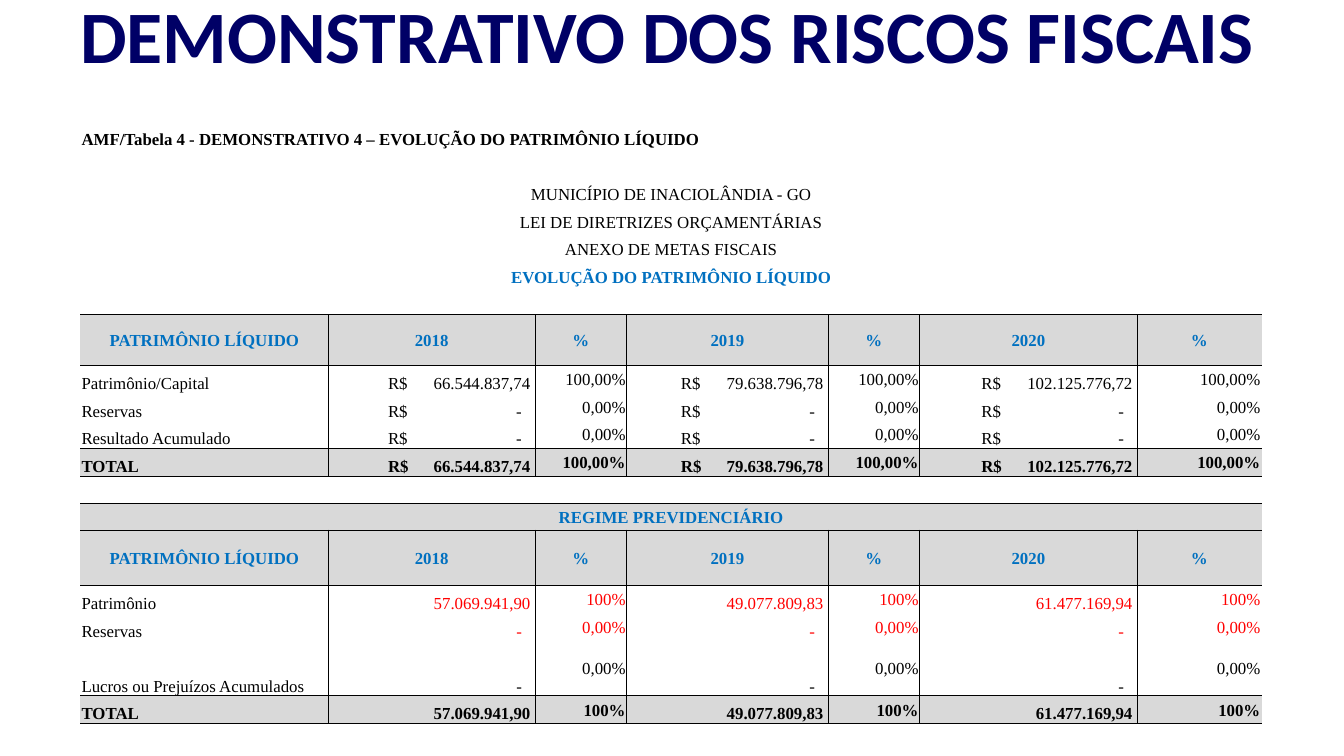
import lxml.etree
import pptx
import pptx.dml.color
import pptx.enum.shapes
import pptx.enum.text
import pptx.oxml.ns
import pptx.util

Pt = pptx.util.Pt
ALIGN = pptx.enum.text.PP_ALIGN
ANCHOR = pptx.enum.text.MSO_ANCHOR
BLACK, WHITE, NAVY, BLUE, RED, GREY = "000000", "FFFFFF", "000066", "0070C0", "FF0000", "D9D9D9"

COLUMN_WIDTHS = [132.9, 110.7, 49.2, 107.8, 49.2, 116.4, 66.7]
ROW_HEIGHT = 14.8
SPECIAL_HEIGHTS = {7: 27.3, 13: 14.2, 14: 29.8, 17: 29.5}
RULED_EDGES = {7, 8, 11, 12, 13, 14, 15, 18, 19}
GRID_ROWS = {*range(7, 12), *range(14, 19)}
CURRENCY_OFFSETS = {1: 32, 3: 29, 5: 33}
INSET = 0.7

HEADINGS = [
    ("MUNICÍPIO DE INACIOLÂNDIA - GO", BLACK, False),
    ("LEI DE DIRETRIZES ORÇAMENTÁRIAS", BLACK, False),
    ("ANEXO DE METAS FISCAIS", BLACK, False),
    ("EVOLUÇÃO DO PATRIMÔNIO LÍQUIDO", BLUE, True),
]
HEADER = ["PATRIMÔNIO LÍQUIDO", "2018", "%", "2019", "%", "2020", "%"]
NET_WORTH = ["66.544.837,74", "79.638.796,78", "102.125.776,72"]
PENSION = ["57.069.941,90", "49.077.809,83", "61.477.169,94"]
DASHES = ["-"] * 3


def color(value):
    """Turn a hex string into a colour."""
    return pptx.dml.color.RGBColor.from_string(value)


def write(para, text, *, size=9, font="Times New Roman", tint=BLACK, bold=False, align=ALIGN.LEFT):
    """Write formatted text into a paragraph."""
    para.alignment = align
    span = para.add_run()
    span.text = text
    span.font.size = Pt(size)
    span.font.name = font
    span.font.bold = bold
    span.font.color.rgb = color(tint)


def add_border(cell, side, visible):
    """Add one edge to a cell, either black or empty."""
    tag = pptx.oxml.ns.qn
    edge = lxml.etree.SubElement(cell._tc.get_or_add_tcPr(), tag(f"a:ln{side}"), w=str(Pt(0.5)))
    if visible:
        fill = lxml.etree.SubElement(edge, tag("a:solidFill"))
        lxml.etree.SubElement(fill, tag("a:srgbClr"), val=BLACK)
    else:
        lxml.etree.SubElement(edge, tag("a:noFill"))


def add_right_tab(para, position):
    """Give a paragraph one right-aligned tab stop."""
    tag = pptx.oxml.ns.qn
    stops = lxml.etree.SubElement(para._p.get_or_add_pPr(), tag("a:tabLst"))
    lxml.etree.SubElement(stops, tag("a:tab"), pos=str(Pt(position)), algn="r")


def prepare_cell(cell, row, column):
    """Set the insets, edges, fill and empty-line size of a cell."""
    cell.margin_left = cell.margin_right = cell.margin_top = Pt(INSET)
    cell.margin_bottom = 0
    cell.vertical_anchor = ANCHOR.BOTTOM
    add_border(cell, "L", row in GRID_ROWS and column > 0)
    add_border(cell, "R", row in GRID_ROWS and column < len(COLUMN_WIDTHS) - 1)
    add_border(cell, "T", row in RULED_EDGES)
    add_border(cell, "B", row + 1 in RULED_EDGES)
    if row in {7, 11, 13, 14, 18}:
        cell.fill.solid()
        cell.fill.fore_color.rgb = color(GREY)
    else:
        cell.fill.background()
    para = cell.text_frame.paragraphs[0]
    lxml.etree.SubElement(para._p, pptx.oxml.ns.qn("a:endParaRPr"), sz="900")


def fill_spanned(table, row, text, last=6, **style):
    """Merge a row from the first column on and write its text."""
    table.cell(row, 0).merge(table.cell(row, last))
    if text:
        write(table.cell(row, 0).text_frame.paragraphs[0], text, **style)


def fill_header(table, row):
    """Write the column headings of a block."""
    for column, text in enumerate(HEADER):
        cell = table.cell(row, column)
        cell.vertical_anchor = ANCHOR.MIDDLE
        write(cell.text_frame.paragraphs[0], text, tint=BLUE, bold=True, align=ALIGN.CENTER)


def fill_amount(cell, column, amount, currency, **style):
    """Write an amount at the right, with its currency sign at the left."""
    gap = 7 if amount == "-" else 2.5
    para = cell.text_frame.paragraphs[0]
    if currency:
        offset = CURRENCY_OFFSETS[column]
        cell.margin_left, cell.margin_right = Pt(offset), 0
        write(para, f"R$\t{amount}", **style)
        add_right_tab(para, COLUMN_WIDTHS[column] - offset - gap)
    else:
        cell.margin_right = Pt(gap)
        write(para, amount, align=ALIGN.RIGHT, **style)


def fill_values(table, row, label, amounts, share, currency=False, tint=BLACK):
    """Write a label and its three pairs of amount and share."""
    bold = label == "TOTAL"
    write(table.cell(row, 0).text_frame.paragraphs[0], label, bold=bold)
    for column, amount in zip((1, 3, 5), amounts):
        fill_amount(table.cell(row, column), column, amount, currency, tint=tint, bold=bold)
        cell = table.cell(row, column + 1)
        cell.vertical_anchor = ANCHOR.MIDDLE
        write(cell.text_frame.paragraphs[0], share, tint=tint, bold=bold, align=ALIGN.RIGHT)


def add_grid(page):
    """Add the table with its sizes and prepared cells."""
    heights = [SPECIAL_HEIGHTS.get(row, ROW_HEIGHT) for row in range(19)]
    frame = page.shapes.add_table(
        len(heights), len(COLUMN_WIDTHS), Pt(43), Pt(64.9), Pt(sum(COLUMN_WIDTHS)), Pt(sum(heights))
    )
    table = frame.table
    table.first_row = table.horz_banding = False
    for column, width in zip(table.columns, COLUMN_WIDTHS):
        column.width = Pt(width)
    for row, height in enumerate(heights):
        table.rows[row].height = Pt(height)
        for column in range(len(COLUMN_WIDTHS)):
            prepare_cell(table.cell(row, column), row, column)
    return table


def fill_grid(table):
    """Write the headings and both blocks of the table."""
    title = "AMF/Tabela 4 - DEMONSTRATIVO 4 – EVOLUÇÃO DO PATRIMÔNIO LÍQUIDO"
    fill_spanned(table, 0, title, last=4, bold=True)
    for row in (1, 6, 12):
        fill_spanned(table, row, "")
    for row, (text, tint, bold) in enumerate(HEADINGS, start=2):
        fill_spanned(table, row, text, tint=tint, bold=bold, align=ALIGN.CENTER)
    fill_header(table, 7)
    fill_values(table, 8, "Patrimônio/Capital", NET_WORTH, "100,00%", currency=True)
    fill_values(table, 9, "Reservas", DASHES, "0,00%", currency=True)
    fill_values(table, 10, "Resultado Acumulado", DASHES, "0,00%", currency=True)
    fill_values(table, 11, "TOTAL", NET_WORTH, "100,00%", currency=True)
    fill_spanned(table, 13, "REGIME PREVIDENCIÁRIO", tint=BLUE, bold=True, align=ALIGN.CENTER)
    table.cell(13, 0).vertical_anchor = ANCHOR.MIDDLE
    fill_header(table, 14)
    fill_values(table, 15, "Patrimônio", PENSION, "100%", tint=RED)
    fill_values(table, 16, "Reservas", DASHES, "0,00%", tint=RED)
    fill_values(table, 17, "Lucros ou Prejuízos Acumulados", DASHES, "0,00%")
    fill_values(table, 18, "TOTAL", PENSION, "100%")


def add_panel(page):
    """Add the white panel below the title."""
    box = page.shapes.add_shape(
        pptx.enum.shapes.MSO_SHAPE.RECTANGLE, 0, Pt(72.7), Pt(720), Pt(332)
    )
    box.shadow.inherit = False
    box.fill.solid()
    box.fill.fore_color.rgb = color(WHITE)
    box.line.color.rgb = color(WHITE)
    box.line.width = Pt(0.75)
    return box


def format_title(box, text):
    """Place the title and write its text."""
    box.left, box.top, box.width, box.height = Pt(24.5), 0, Pt(666), Pt(36)
    frame = box.text_frame
    frame.word_wrap = True
    frame.auto_size = pptx.enum.text.MSO_AUTO_SIZE.NONE
    frame.vertical_anchor = ANCHOR.MIDDLE
    write(frame.paragraphs[0], text, size=39.6, font="Calibri", tint=NAVY, bold=True, align=ALIGN.CENTER)


def main():
    """Build the slide and save the deck."""
    deck = pptx.Presentation()
    deck.slide_width, deck.slide_height = Pt(720), Pt(405)
    page = deck.slides.add_slide(deck.slide_layouts[5])
    title = page.shapes.title
    format_title(title, "DEMONSTRATIVO DOS RISCOS FISCAIS")
    title.element.addprevious(add_panel(page).element)
    fill_grid(add_grid(page))
    deck.save("out.pptx")


if __name__ == "__main__":
    main()
